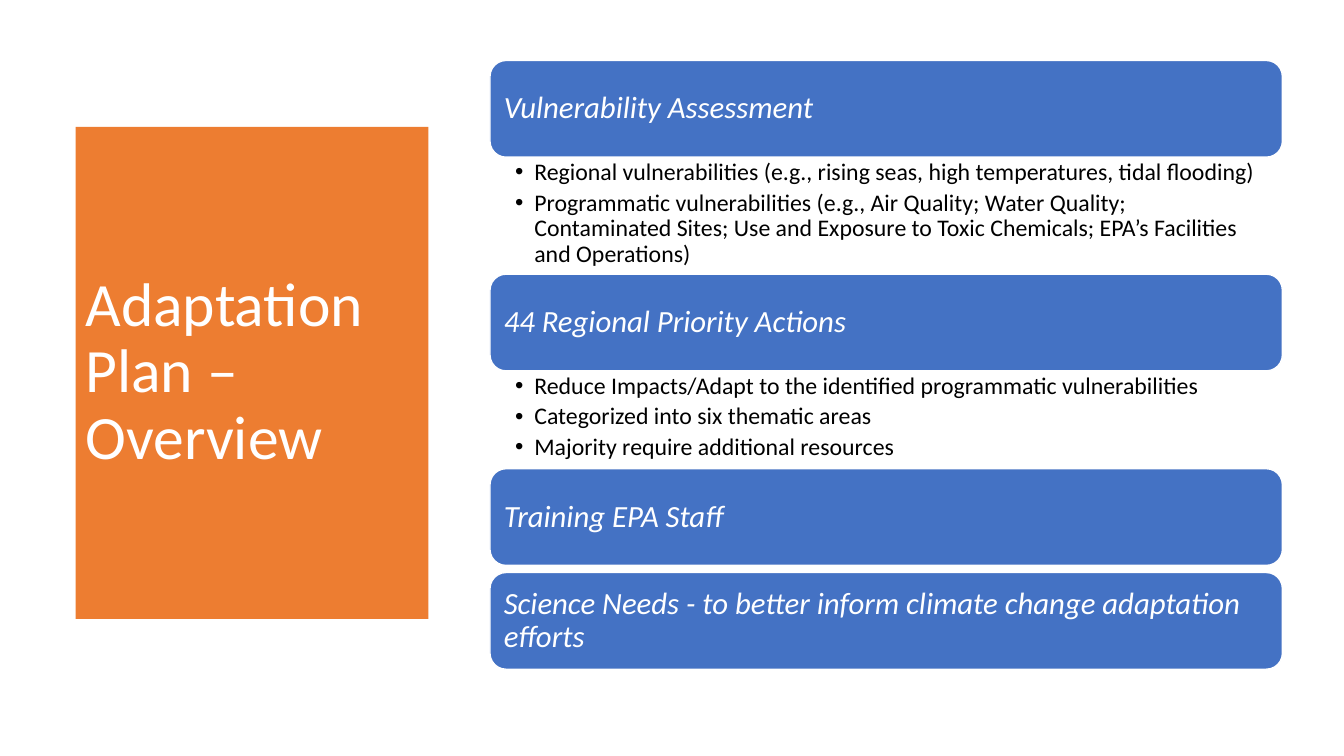
from lxml.etree import SubElement
from pptx import Presentation
from pptx.dml.color import RGBColor
from pptx.enum.shapes import MSO_SHAPE
from pptx.enum.text import MSO_ANCHOR, PP_ALIGN
from pptx.oxml.ns import qn
from pptx.util import Emu, Pt

PX = 9144  # EMU per px, 100 px to the inch
FONT = "Calibri"
ORANGE = RGBColor(0xED, 0x7D, 0x31)
BLUE = RGBColor(0x44, 0x72, 0xC4)
WHITE = RGBColor(0xFF, 0xFF, 0xFF)
BLACK = RGBColor(0x00, 0x00, 0x00)

LIST_LEFT, LIST_TOP, LIST_WIDTH = 486, 60, 786
HEADING_HEIGHT, GAP = 96, 7
INDENT = 19

# heading, bullets, height of the space below the heading
SECTIONS = [
    ("Vulnerability Assessment", [
        "Regional vulnerabilities (e.g., rising seas, high temperatures, tidal flooding)",
        "Programmatic vulnerabilities (e.g., Air Quality; Water Quality; Contaminated Sites; "
        "Use and Exposure to Toxic Chemicals; EPA’s Facilities and Operations)",
    ], 116),
    ("44 Regional Priority Actions", [
        "Reduce Impacts/Adapt to the identified programmatic vulnerabilities",
        "Categorized into six thematic areas",
        "Majority require additional resources",
    ], 97),
    ("Training EPA Staff", [], GAP),
    ("Science Needs - to better inform climate change adaptation efforts", [], GAP),
]


def px(*lengths):
    return [Emu(n * PX) for n in lengths]


def set_margins(tf, left, top, right, bottom):
    tf.word_wrap = True
    tf.margin_left, tf.margin_top, tf.margin_right, tf.margin_bottom = px(
        left, top, right, bottom)


def format_paragraph(p, size, color, italic=False):
    p.alignment = PP_ALIGN.LEFT
    p.line_spacing = 0.9
    for r in p.runs:
        r.font.name = FONT
        r.font.size = Pt(size)
        r.font.italic = italic
        r.font.color.rgb = color


def add_bullet(p):
    pPr = p._p.get_or_add_pPr()
    pPr.set("marL", str(INDENT * PX))
    pPr.set("indent", str(-INDENT * PX))
    SubElement(pPr, qn("a:buFont"), typeface="Arial")
    SubElement(pPr, qn("a:buChar"), char="•")


def add_panel(slide, kind, box, fill, text, size, margins, italic=False):
    """Filled shape with white, left-aligned, vertically centred text."""
    sp = slide.shapes.add_shape(kind, *px(*box))
    sp.shadow.inherit = False
    sp.fill.solid()
    sp.fill.fore_color.rgb = fill
    sp.line.fill.background()
    tf = sp.text_frame
    set_margins(tf, *margins)
    tf.vertical_anchor = MSO_ANCHOR.MIDDLE
    tf.text = text
    format_paragraph(tf.paragraphs[0], size, WHITE, italic)
    return sp


def add_heading(slide, top, text):
    sp = add_panel(slide, MSO_SHAPE.ROUNDED_RECTANGLE,
                   (LIST_LEFT, top, LIST_WIDTH, HEADING_HEIGHT),
                   BLUE, text, 22, (9, 9, 9, 9), italic=True)
    sp.line.color.rgb = WHITE
    sp.line.width = Pt(1)


def add_bullets(slide, top, height, bullets):
    tf = slide.shapes.add_textbox(*px(LIST_LEFT, top, LIST_WIDTH, height)).text_frame
    set_margins(tf, 25, 3, 17, 3)
    tf.text = "\n".join(bullets)
    for p in tf.paragraphs:
        format_paragraph(p, 17, BLACK)
        p.space_after = Pt(3.4)
        add_bullet(p)


def main():
    prs = Presentation()
    prs.slide_width, prs.slide_height = px(1333, 750)
    slide = prs.slides.add_slide(prs.slide_layouts[6])

    add_panel(slide, MSO_SHAPE.RECTANGLE, (75, 126, 350, 488), ORANGE,
              "Adaptation Plan – Overview", 44, (10, 5, 10, 5))

    top = LIST_TOP
    for heading, bullets, space_below in SECTIONS:
        add_heading(slide, top, heading)
        top += HEADING_HEIGHT
        if bullets:
            add_bullets(slide, top, space_below, bullets)
        top += space_below

    prs.save("out.pptx")


if __name__ == "__main__":
    main()
